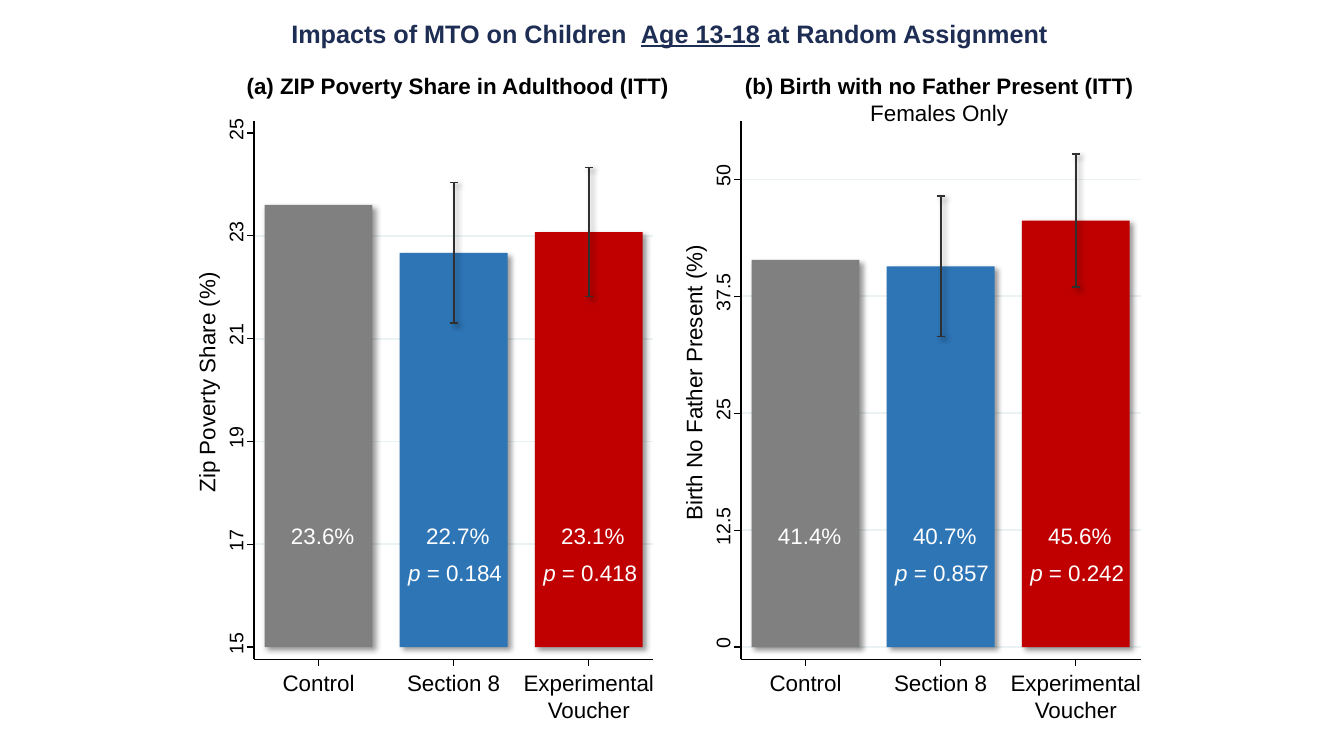
from lxml import etree
from pptx import Presentation
from pptx.dml.color import RGBColor
from pptx.enum.shapes import MSO_CONNECTOR, MSO_SHAPE
from pptx.enum.text import MSO_AUTO_SIZE, PP_ALIGN
from pptx.oxml.ns import qn
from pptx.util import Inches, Pt

STRAIGHT = MSO_CONNECTOR.STRAIGHT
RECTANGLE = MSO_SHAPE.RECTANGLE
GROW = MSO_AUTO_SIZE.SHAPE_TO_FIT_TEXT
LEFT, CENTER = PP_ALIGN.LEFT, PP_ALIGN.CENTER

COLORS = {
    "title": "1E2D53", "text": "000000", "label": "FFFFFF",
    "grid": "EAF2F3", "axis": "000000", "whisker": "303030", "shadow": "000000",
    "Control": "808080", "Section 8": "2E75B6", "Experimental\nVoucher": "C00000",
}
CATEGORY_WIDTHS = {"Control": 0.72, "Section 8": 0.93, "Experimental\nVoucher": 1.37}

# Each bar: height, printed share, p-value, confidence interval
PANELS = [
    {
        "box": (2.52, 1.2, 3.96, 5.34),
        "title": [[("(a) ZIP Poverty Share in Adulthood (ITT)", {"bold": True})]],
        "title_box": (-0.2, 4.44, 0.37),
        "axis_title": " Zip Poverty Share (%)", "axis_title_width": 2.27,
        "ticks": ["15", "17", "19", "21", "23", "25"],
        "grid": ["17", "19", "21", "23"],
        "inches_per_unit": 0.51,
        "bars": [(23.6, " 23.6%", None, None),
                 (22.67, " 22.7%", "0.184", (21.31, 24.04)),
                 (23.07, " 23.1%", "0.418", (21.82, 24.33))],
    },
    {
        "box": (7.35, 1.2, 3.97, 5.34),
        "title": [[("(b) Birth with no Father Present (ITT)", {"bold": True})],
                  [("Females Only", {})]],
        "title_box": (-0.09, 4.11, 0.64),
        "axis_title": " Birth No Father Present (%)", "axis_title_width": 2.83,
        "ticks": ["0", "12.5", "25", "37.5", "50"],
        "grid": ["0", "12.5", "25", "37.5", "50"],
        "inches_per_unit": 0.0928,
        "bars": [(41.4, " 41.4%", None, None),
                 (40.7, " 40.7%", "0.857", (33.2, 48.2)),
                 (45.6, " 45.6%", "0.242", (38.5, 52.7))],
    },
]

BAR_WIDTH, BAR_PITCH, FIRST_CENTER = 1.07, 1.34, 0.64
BASE_GAP = 0.12   # from the lowest tick down to the category axis
TICK = 0.07
CAP = 0.04


def rgb(name):
    return RGBColor.from_string(COLORS[name])


def add_shadow(effects):
    shadow = etree.SubElement(effects, qn("a:outerShdw"), blurRad=str(Pt(4)),
                              dist=str(Pt(3)), dir="2700000", algn="tl", rotWithShape="0")
    color = etree.SubElement(shadow, qn("a:srgbClr"), val=COLORS["shadow"])
    etree.SubElement(color, qn("a:alpha"), val="40000")


def add_line(slide, x1, y1, x2, y2, color, width, shadow=False):
    line = slide.shapes.add_connector(STRAIGHT, Inches(x1), Inches(y1), Inches(x2), Inches(y2))
    line.line.color.rgb = rgb(color)
    line.line.width = Pt(width)
    effects = etree.SubElement(line._element.spPr, qn("a:effectLst"))
    if shadow:
        add_shadow(effects)


def add_text(slide, paragraphs, left, top, width, height, size=16, color="text",
             align=CENTER, wrap=False, inset=True, rotation=0):
    """Paragraphs are plain text, or lists of (text, font attributes) runs."""
    if isinstance(paragraphs, str):
        paragraphs = [[(line, {})] for line in paragraphs.split("\n")]
    box = slide.shapes.add_textbox(Inches(left), Inches(top), Inches(width), Inches(height))
    box.rotation = rotation
    frame = box.text_frame
    frame.word_wrap = wrap
    frame.auto_size = GROW
    if not inset:
        frame.margin_left = frame.margin_right = frame.margin_top = frame.margin_bottom = 0
    for index, runs in enumerate(paragraphs):
        paragraph = frame.add_paragraph() if index else frame.paragraphs[0]
        paragraph.alignment = align
        for text, attributes in runs:
            run = paragraph.add_run()
            run.text = text
            run.font.name = "Arial"
            run.font.size = Pt(size)
            run.font.color.rgb = rgb(color)
            for attribute, value in attributes.items():
                setattr(run.font, attribute, value)


def add_upright_text(slide, text, center_x, center_y, width, height, size):
    add_text(slide, text, center_x - width / 2, center_y - height / 2, width, height,
             size=size, align=LEFT, inset=False, rotation=270)


def add_bar(slide, category, center, top, base):
    bar = slide.shapes.add_shape(RECTANGLE, Inches(center - BAR_WIDTH / 2), Inches(top),
                                 Inches(BAR_WIDTH), Inches(base - top))
    bar.fill.solid()
    bar.fill.fore_color.rgb = rgb(category)
    bar.line.fill.background()
    bar.shadow.inherit = False
    add_shadow(bar._element.spPr.find(qn("a:effectLst")))


def add_whisker(slide, center, low, high):
    add_line(slide, center, high, center, low, "whisker", 1.25, shadow=True)
    for y in (low, high):
        add_line(slide, center - CAP, y, center + CAP, y, "whisker", 1.25, shadow=True)


def add_panel(slide, panel):
    left, top, width, height = panel["box"]
    bottom = top + height
    base = bottom - BASE_GAP
    lowest = float(panel["ticks"][0])

    def y_of(value):
        return base - (float(value) - lowest) * panel["inches_per_unit"]

    columns = [(category, left + FIRST_CENTER + i * BAR_PITCH, bar)
               for i, (category, bar) in enumerate(zip(CATEGORY_WIDTHS, panel["bars"]))]

    # Grid, bars and confidence intervals
    for value in panel["grid"]:
        add_line(slide, left, y_of(value), left + width, y_of(value), "grid", 1.25)
    for category, center, bar in columns:
        add_bar(slide, category, center, y_of(bar[0]), base)
    for _, center, (_, _, _, interval) in columns:
        if interval:
            add_whisker(slide, center, *map(y_of, interval))

    # Value axis
    add_line(slide, left, bottom, left, top, "axis", 0.88)
    for value in panel["ticks"]:
        y = y_of(value)
        add_line(slide, left, y, left - TICK, y, "axis", 0.88)
        digits = len(value.replace(".", ""))
        label_width = 0.11 * digits + 0.05 * value.count(".")
        add_upright_text(slide, value, left - 0.18, y - 0.04, label_width, 0.24, 14)
    add_upright_text(slide, panel["axis_title"], left - 0.47, top + 2.61,
                     panel["axis_title_width"], 0.27, 16)

    # Category axis, with the labels in and under the bars
    add_line(slide, left, bottom, left + width, bottom, "axis", 0.88)
    for category, center, (_, share, p_value, _) in columns:
        add_line(slide, center, bottom, center, bottom + TICK, "axis", 0.88)
        label_width = CATEGORY_WIDTHS[category]
        add_text(slide, category, center - label_width / 2, bottom + 0.1, label_width,
                 0.27 * (1 + category.count("\n")), inset=False)
        add_text(slide, share, center - 0.52, bottom - 1.41, 1.06, 0.37,
                 color="label", wrap=True)
        if p_value:
            add_text(slide, [[("p", {"italic": True}), (f" = {p_value}", {})]],
                     center - 0.55, bottom - 1.04, 1.21, 0.37,
                     color="label", align=LEFT, wrap=True)

    # Panel title
    offset, title_width, title_height = panel["title_box"]
    add_text(slide, panel["title"], left + offset, top - 0.53, title_width, title_height)


def add_slide_title(slide, left, top, width, height):
    bold = {"bold": True}
    add_text(slide, [[("Impacts of MTO on Children  ", bold),
                      ("Age 13-18", {"bold": True, "underline": True}),
                      (" at Random Assignment", bold)]],
             left, top, width, height, size=18, color="title", wrap=True)


def main():
    deck = Presentation()
    deck.slide_width, deck.slide_height = Inches(13.33), Inches(7.5)
    slide = deck.slides.add_slide(deck.slide_layouts[6])
    for panel in PANELS:
        add_panel(slide, panel)
    add_slide_title(slide, 1.64, 0.13, 10, 0.4)
    deck.save("out.pptx")


if __name__ == "__main__":
    main()
